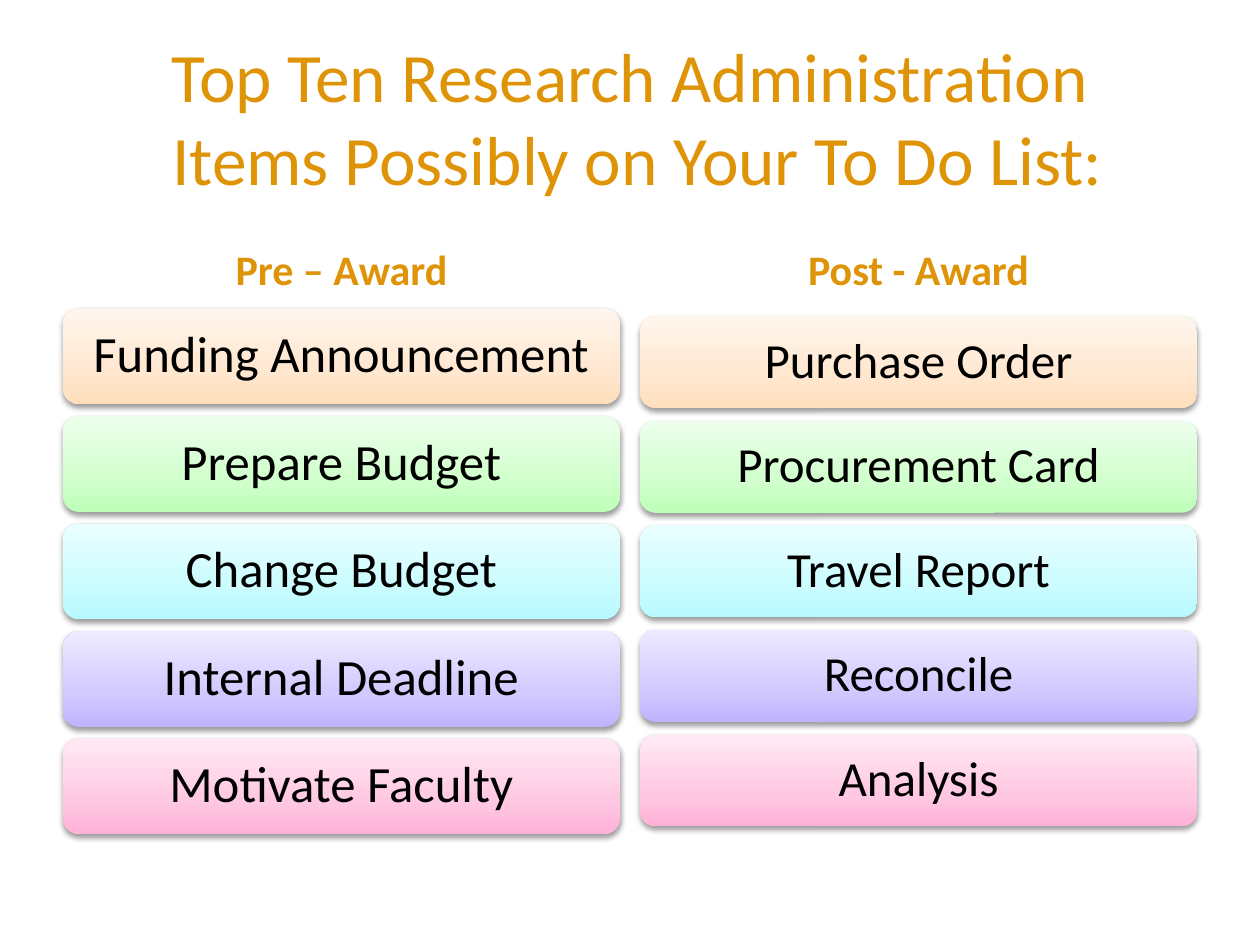
from copy import deepcopy

from lxml.etree import SubElement
from pptx import Presentation
from pptx.dml.color import RGBColor
from pptx.enum.shapes import MSO_SHAPE
from pptx.enum.text import MSO_ANCHOR, PP_ALIGN
from pptx.oxml.ns import qn
from pptx.util import Inches, Pt

GOLD = RGBColor(0xDF, 0x93, 0x07)
BLACK = RGBColor(0x00, 0x00, 0x00)

# Gradient colours of each row, from the bottom edge to the top edge
ORANGE = (RGBColor(0xFF, 0xDE, 0xBC), RGBColor(0xFF, 0xE7, 0xD0), RGBColor(0xFF, 0xF6, 0xED))
GREEN = (RGBColor(0xBE, 0xFF, 0xB9), RGBColor(0xD1, 0xFF, 0xCD), RGBColor(0xED, 0xFF, 0xEC))
CYAN = (RGBColor(0xB6, 0xFA, 0xFF), RGBColor(0xCB, 0xFC, 0xFF), RGBColor(0xEB, 0xFE, 0xFF))
VIOLET = (RGBColor(0xC0, 0xB3, 0xFF), RGBColor(0xD2, 0xC9, 0xFF), RGBColor(0xEE, 0xEA, 0xFF))
PINK = (RGBColor(0xFF, 0xB1, 0xD7), RGBColor(0xFF, 0xC8, 0xE2), RGBColor(0xFF, 0xEA, 0xF4))
ROW_COLOURS = (ORANGE, GREEN, CYAN, VIOLET, PINK)
STOP_POSITIONS = (0, 0.35, 1)

# Grid of 100 columns by 75 rows
COLUMNS, ROWS = 100, 75
LIST_WIDTH = 44.2

# Heading, left, first top, card height, pitch, text size, items
TODO_LISTS = (
    ("Pre – Award", 5, 24.5, 7.6, 8.53, 29,
     ("Funding Announcement", "Prepare Budget", "Change Budget",
      "Internal Deadline", "Motivate Faculty")),
    ("Post - Award", 50.8, 25.1, 7.3, 8.3, 28,
     ("Purchase Order", "Procurement Card", "Travel Report",
      "Reconcile", "Analysis")),
)


class TodoSlide:
    font = "Calibri"

    def __init__(self, deck):
        self.slide = deck.slides.add_slide(deck.slide_layouts[5])
        self.column = deck.slide_width / COLUMNS
        self.row = deck.slide_height / ROWS

    def box(self, left, top, width, height):
        return (round(left * self.column), round(top * self.row),
                round(width * self.column), round(height * self.row))

    def add_text(self, shape, lines, size, colour, anchor, bold=False, spacing=None):
        frame = shape.text_frame
        frame.word_wrap = True
        frame.vertical_anchor = anchor
        paragraph = frame.paragraphs[0]
        paragraph.alignment = PP_ALIGN.CENTER
        paragraph.line_spacing = spacing
        for index, line in enumerate(lines):
            if index:
                paragraph.add_line_break()
            run = paragraph.add_run()
            run.text = line
            run.font.name = self.font
            run.font.size = Pt(size)
            run.font.bold = bold
            run.font.color.rgb = colour

    def title(self, lines, *place):
        title = self.slide.shapes.title
        title.left, title.top, title.width, title.height = self.box(*place)
        self.add_text(title, lines, 39.6, GOLD, MSO_ANCHOR.MIDDLE)

    def heading(self, text, *place):
        heading = self.slide.shapes.add_textbox(*self.box(*place))
        self.add_text(heading, [text], 24, GOLD, MSO_ANCHOR.BOTTOM, bold=True)

    def card(self, text, size, colours, *place):
        card = self.slide.shapes.add_shape(
            MSO_SHAPE.ROUNDED_RECTANGLE, *self.box(*place))
        card.line.fill.background()
        self.shade(card, colours)
        self.drop_shadow(card)
        self.add_text(card, [text], size, BLACK, MSO_ANCHOR.MIDDLE, spacing=0.9)

    def shade(self, card, colours):
        card.fill.gradient()
        card.fill.gradient_angle = 90
        # A new gradient has two stops; the third goes between them
        stop_list = card._element.spPr.find(qn("a:gradFill")).find(qn("a:gsLst"))
        stop_list.insert(1, deepcopy(stop_list[0]))
        for stop, colour, position in zip(card.fill.gradient_stops, colours, STOP_POSITIONS):
            stop.color.rgb = colour
            stop.position = position

    def drop_shadow(self, card):
        card.shadow.inherit = False
        effects = card._element.spPr.find(qn("a:effectLst"))
        shadow = SubElement(effects, qn("a:outerShdw"), blurRad="40000",
                            dist="20000", dir="5400000", rotWithShape="0")
        colour = SubElement(shadow, qn("a:srgbClr"), val=str(BLACK))
        SubElement(colour, qn("a:alpha"), val="38000")


def main():
    deck = Presentation()
    deck.slide_width, deck.slide_height = Inches(10), Inches(7.5)
    todo = TodoSlide(deck)

    # Title
    todo.title(("Top Ten Research Administration",
                " Items Possibly on Your To Do List:"), 5, 3, 90, 12.5)

    # One headed stack of cards for each list
    for heading, left, first_top, height, pitch, size, items in TODO_LISTS:
        todo.heading(heading, left, 16.8, LIST_WIDTH, 7)
        for index, (item, colours) in enumerate(zip(items, ROW_COLOURS)):
            todo.card(item, size, colours,
                      left, first_top + index * pitch, LIST_WIDTH, height)

    deck.save("out.pptx")


if __name__ == "__main__":
    main()
